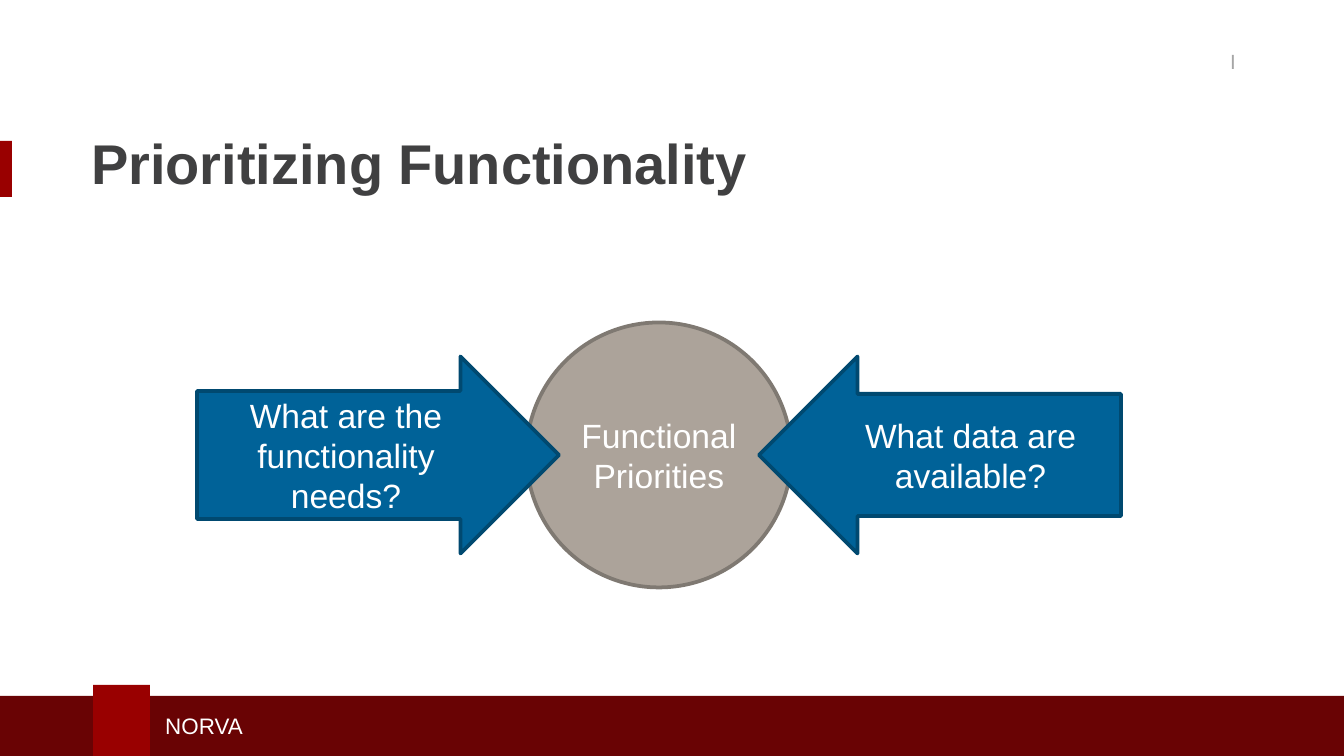
from pptx import Presentation
from pptx.dml.color import RGBColor
from pptx.enum.shapes import MSO_SHAPE as Shape
from pptx.enum.text import MSO_ANCHOR as Anchor, PP_ALIGN as Align
from pptx.util import Pt

PX = 914400 / 134.4  # EMU in one px
WIDTH, HEIGHT = 1344, 756

CRIMSON = RGBColor(0x99, 0x00, 0x00)
DARK_RED = RGBColor(0x69, 0x03, 0x04)
CHARCOAL = RGBColor(0x40, 0x40, 0x41)
GRAY = RGBColor(0xA6, 0xA6, 0xA6)
WHITE = RGBColor(0xFF, 0xFF, 0xFF)
TAUPE = RGBColor(0xAC, 0xA3, 0x9A)
TAUPE_EDGE = RGBColor(0x7F, 0x79, 0x72)
BLUE = RGBColor(0x00, 0x62, 0x98)
BLUE_EDGE = RGBColor(0x00, 0x49, 0x70)

# Content: left, top, width, height in px
BARS = [
    ((0, 141, 12, 56), CRIMSON),
    ((0, 696, WIDTH, HEIGHT - 696), DARK_RED),
    ((93, 685, 57, HEIGHT - 685), CRIMSON),
]
LABELS = [
    # text, box, size, colour, bold, alignment, anchor
    ("NORVA", (152, 706, 531, 40), 12, WHITE, False, Align.LEFT, Anchor.MIDDLE),
    ("Prioritizing Functionality", (78, 111, 1176, 103), 30, CHARCOAL, True,
     Align.LEFT, Anchor.MIDDLE),
    ("I", (711, 42, 538, 38), 11, GRAY, False, Align.RIGHT, Anchor.TOP),
]
CENTER_X, CENTER_Y = 659, 455
CIRCLE = 265
ARROW_WIDTH, ARROW_HEIGHT = 362, 197
TIP_GAP = 100  # from the circle's center to each arrow tip
DIAGRAM = [
    # text, preset, left, width, height, fill, edge, adjustments
    ("Functional Priorities", Shape.OVAL, CENTER_X - CIRCLE / 2,
     CIRCLE, CIRCLE, TAUPE, TAUPE_EDGE, ()),
    ("What are the functionality needs?", Shape.RIGHT_ARROW,
     CENTER_X - TIP_GAP - ARROW_WIDTH, ARROW_WIDTH, ARROW_HEIGHT,
     BLUE, BLUE_EDGE, (0.65, 0.5)),
    ("What data are available?", Shape.LEFT_ARROW, CENTER_X + TIP_GAP,
     ARROW_WIDTH, ARROW_HEIGHT, BLUE, BLUE_EDGE, (0.62, 0.5)),
]


def emu(*lengths):
    return [round(length * PX) for length in lengths]


def add_block(slide, preset, box, fill, edge=None):
    shape = slide.shapes.add_shape(preset, *emu(*box))
    shape.shadow.inherit = False
    shape.fill.solid()
    shape.fill.fore_color.rgb = fill
    if edge is None:
        shape.line.fill.background()
    else:
        shape.line.color.rgb = edge
        shape.line.width = Pt(2)
    return shape


def set_text(shape, text, size, color, bold, alignment, anchor):
    frame = shape.text_frame
    frame.word_wrap = True
    frame.vertical_anchor = anchor
    frame.text = text
    paragraph = frame.paragraphs[0]
    paragraph.alignment = alignment
    font = paragraph.runs[0].font
    font.name, font.size, font.bold = "Arial", Pt(size), bold
    font.color.rgb = color


presentation = Presentation()
presentation.slide_width, presentation.slide_height = emu(WIDTH, HEIGHT)
slide = presentation.slides.add_slide(presentation.slide_layouts[6])

# Title accent and footer bars
for box, color in BARS:
    add_block(slide, Shape.RECTANGLE, box, color)

# Footer, title and corner text
for text, box, *style in LABELS:
    set_text(slide.shapes.add_textbox(*emu(*box)), text, *style)

# Circle with an arrow from each side
for text, preset, left, width, height, fill, edge, adjustments in DIAGRAM:
    box = (left, CENTER_Y - height / 2, width, height)
    shape = add_block(slide, preset, box, fill, edge)
    for index, value in enumerate(adjustments):
        shape.adjustments[index] = value
    set_text(shape, text, 18, WHITE, False, Align.CENTER, Anchor.MIDDLE)

presentation.save("out.pptx")
